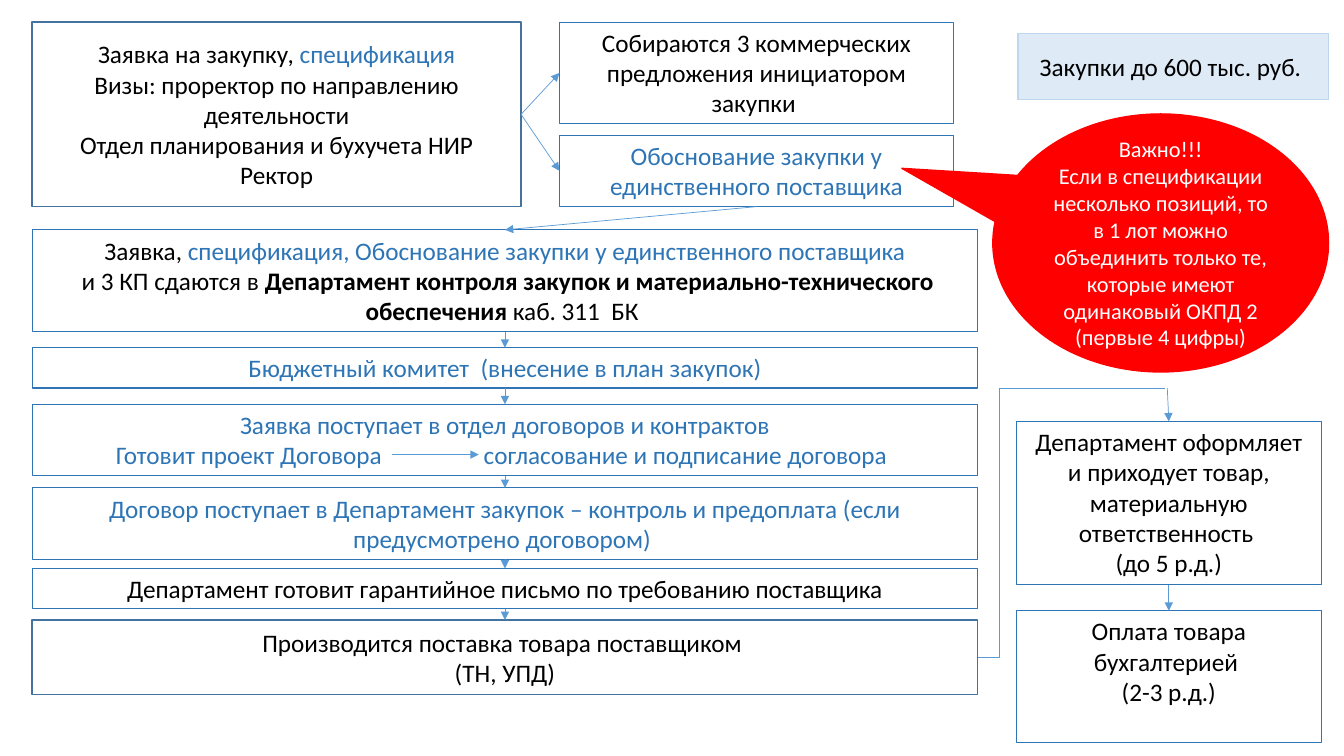
"""Builds a one-slide flowchart of purchases up to 600 thousand roubles."""
from lxml import etree
from pptx import Presentation
from pptx.dml.color import RGBColor
from pptx.enum.shapes import MSO_CONNECTOR as CONN, MSO_SHAPE as SHAPE
from pptx.enum.text import MSO_ANCHOR as ANCHOR, PP_ALIGN as ALIGN
from pptx.oxml.ns import qn
from pptx.util import Pt

BLACK = RGBColor(0x00, 0x00, 0x00)
WHITE = RGBColor(0xFF, 0xFF, 0xFF)
BLUE = RGBColor(0x2E, 0x75, 0xB6)
STEEL = RGBColor(0x43, 0x73, 0x9E)
SKY = RGBColor(0x5B, 0x9B, 0xD5)
PALE = RGBColor(0xDE, 0xEB, 0xF7)
PALE_EDGE = RGBColor(0xBD, 0xD7, 0xEE)
RED = RGBColor(0xFF, 0x00, 0x00)

FONT = "Calibri"
TOP, MIDDLE = ANCHOR.TOP, ANCHOR.MIDDLE
OUTLINED = (None, BLUE, 0.75, TOP)
FILLED = (WHITE, STEEL, 1, MIDDLE)
TITLE = (PALE, PALE_EDGE, 1, MIDDLE)
WARNING = (RED, RED, 1, MIDDLE)

CHAIN_X, CHAIN_W = 23, 675.4
PAIR_X, PAIR_W = 399.6, 281.5
RIGHT_X, RIGHT_W = 725.8, 218.2
TAB_STOPS = (52.6, 315.4)

BOXES = {
    "title": ((727.2, 23.8, 221.8, 47.5), TITLE, BLACK,
              ["Закупки до 600 тыс. руб. "]),
    "request": ((CHAIN_X, 15.8, 349.2, 131.8), FILLED, BLACK,
                [["Заявка на закупку, ", ("спецификация", BLUE, False)],
                 "Визы: проректор по направлению деятельности",
                 "Отдел планирования и бухучета НИР",
                 "Ректор"]),
    "offers": ((PAIR_X, 15.8, PAIR_W, 72.7), OUTLINED, BLACK,
               ["Собираются 3 коммерческих предложения инициатором закупки "]),
    "reasons": ((PAIR_X, 96.5, PAIR_W, 51.1), OUTLINED, BLUE,
                ["Обоснование закупки у единственного поставщика"]),
    "submission": ((CHAIN_X, 164.2, CHAIN_W, 72.7), OUTLINED, BLACK,
                   [["Заявка, ",
                     ("спецификация, Обоснование закупки у единственного поставщика",
                      BLUE, False)],
                    [" и 3 КП сдаются в ",
                     ("Департамент контроля закупок и материально-технического "
                      "обеспечения ", BLACK, True),
                     "каб. 311  БК "]]),
    "budget": ((CHAIN_X, 248.4, CHAIN_W, 28.8), OUTLINED, BLUE,
               ["Бюджетный комитет  (внесение в план закупок)"]),
    "contract": ((CHAIN_X, 288.7, CHAIN_W, 51.1), OUTLINED, BLUE,
                 ["Заявка поступает в отдел договоров и контрактов",
                  "\tГотовит проект Договора\tсогласование и подписание договора"]),
    "prepayment": ((CHAIN_X, 348.5, CHAIN_W, 51.1), OUTLINED, BLUE,
                   ["Договор поступает в Департамент закупок – контроль и "
                    "предоплата (если предусмотрено договором) "]),
    "letter": ((CHAIN_X, 406.1, CHAIN_W, 28.8), OUTLINED, BLACK,
               ["Департамент готовит гарантийное письмо по требованию поставщика"]),
    "delivery": ((CHAIN_X, 442.8, CHAIN_W, 53.3), FILLED, BLACK,
                 ["Производится поставка товара поставщиком ", "(ТН, УПД)"]),
    "receipt": ((RIGHT_X, 301, RIGHT_W, 116.6), OUTLINED, BLACK,
                ["Департамент оформляет и приходует товар, материальную "
                 "ответственность ", "(до 5 р.д.)"]),
    "payment": ((RIGHT_X, 436.3, RIGHT_W, 94.3), OUTLINED, BLACK,
                ["Оплата товара бухгалтерией ", "(2-3 р.д.)"]),
}
CALLOUT = ((709.2, 81.4, 239.8, 184.3), WARNING, WHITE,
           ["Важно!!!",
            "Если в спецификации несколько позиций, то в 1 лот можно объединить "
            "только те, которые имеют одинаковый ОКПД 2 (первые 4 цифры)"])
CALLOUT_TIP = (-0.771, -0.289)

CHAIN = ["submission", "budget", "contract", "prepayment", "letter", "delivery"]
LINKS = [("request", 3, "offers", 1), ("request", 3, "reasons", 1),
         ("reasons", 2, "submission", 0), ("receipt", 2, "payment", 0)]
LINKS += [(a, 2, b, 0) for a, b in zip(CHAIN, CHAIN[1:])]
TURN_X, TURN_Y = 714.2, 277.2


def add_tabs(p):
    """Sets the tab stops of a left-aligned paragraph."""
    tabs = etree.SubElement(p._p.get_or_add_pPr(), qn("a:tabLst"))
    for stop in TAB_STOPS:
        etree.SubElement(tabs, qn("a:tab"), pos=str(Pt(stop)), algn="l")


def add_box(shapes, box, kind=SHAPE.RECTANGLE, size=18):
    """Adds one shape with its text."""
    frame, (fill, edge, weight, anchor), color, paragraphs = box
    s = shapes.add_shape(kind, *map(Pt, frame))
    s.shadow.inherit = False
    if fill is None:
        s.fill.background()
    else:
        s.fill.solid()
        s.fill.fore_color.rgb = fill
    s.line.color.rgb = edge
    s.line.width = Pt(weight)
    tf = s.text_frame
    tf.word_wrap = True
    tf.vertical_anchor = anchor
    for i, runs in enumerate(paragraphs):
        p = tf.add_paragraph() if i else tf.paragraphs[0]
        runs = [runs] if isinstance(runs, str) else runs
        p.alignment = ALIGN.CENTER
        if runs[0].startswith("\t"):
            p.alignment = ALIGN.LEFT
            add_tabs(p)
        p.font.name, p.font.size, p.font.color.rgb = FONT, Pt(size), color
        for run in runs:
            text, tint, bold = (run, color, False) if isinstance(run, str) else run
            r = p.add_run()
            r.text = text
            r.font.color.rgb = tint
            if bold:
                r.font.bold = True
    return s


def add_line(shapes, start=(0, 0), end=(0, 0), arrow=True, kind=CONN.STRAIGHT):
    """Adds a thin connector, with an arrowhead at its end if asked."""
    c = shapes.add_connector(kind, *map(Pt, (*start, *end)))
    c.line.color.rgb = SKY
    c.line.width = Pt(0.5)
    if arrow:
        etree.SubElement(c.line._get_or_add_ln(), qn("a:tailEnd"), type="triangle")
    etree.SubElement(c._element.spPr, qn("a:effectLst"))
    return c


def main():
    """Draws the slide and saves it."""
    prs = Presentation()
    prs.slide_width, prs.slide_height = Pt(960), Pt(540)
    shapes = prs.slides.add_slide(prs.slide_layouts[6]).shapes

    boxes = {name: add_box(shapes, box) for name, box in BOXES.items()}
    for source, out_side, target, in_side in LINKS:
        c = add_line(shapes)
        c.begin_connect(boxes[source], out_side)
        c.end_connect(boxes[target], in_side)

    add_line(shapes, (280.1, 324.7), (342, 324.7))
    bend = add_line(shapes, (CHAIN_X + CHAIN_W, 469.5), (TURN_X, TURN_Y),
                    arrow=False, kind=CONN.ELBOW)
    bend._element.spPr.find(qn("a:prstGeom")).set("prst", "bentConnector2")
    add_line(shapes, (TURN_X, TURN_Y), (832.3, TURN_Y), arrow=False)
    add_line(shapes, (833.8, TURN_Y)).end_connect(boxes["receipt"], 0)

    callout = add_box(shapes, CALLOUT, SHAPE.OVAL_CALLOUT, 16)
    for i, offset in enumerate(CALLOUT_TIP):
        callout.adjustments[i] = offset

    prs.save("out.pptx")


if __name__ == "__main__":
    main()
